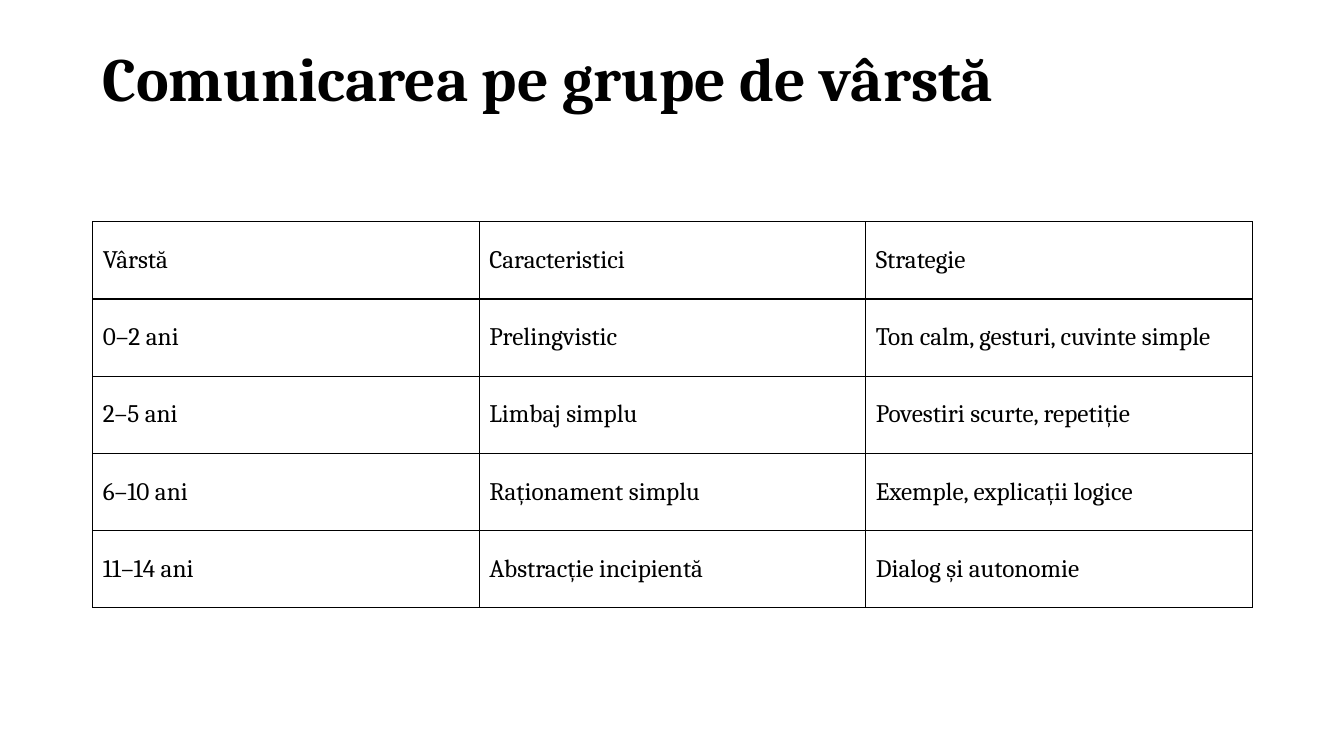
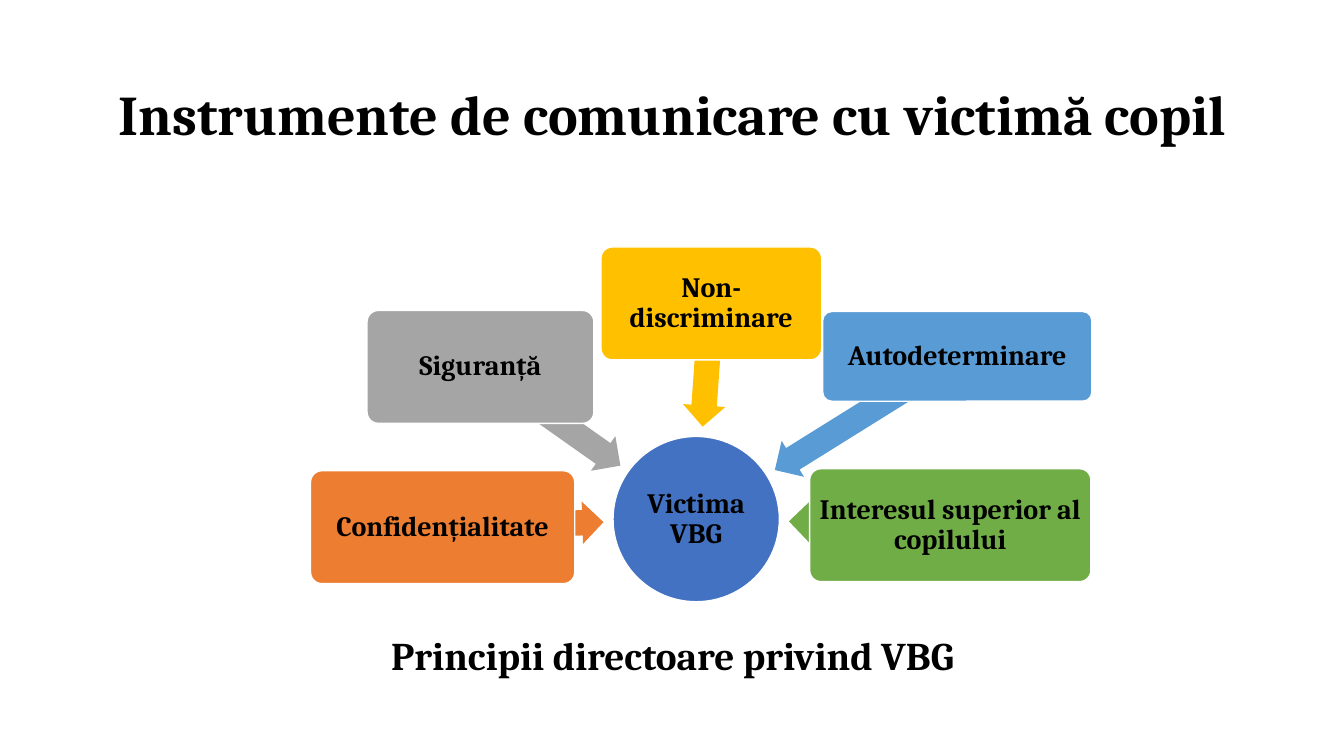
import math

import pptx
import pptx.util
from lxml import etree
from pptx.dml.color import RGBColor
from pptx.enum.shapes import MSO_SHAPE
from pptx.enum.text import MSO_ANCHOR, PP_ALIGN
from pptx.oxml.ns import qn

Inches, Pt = pptx.util.Inches, pptx.util.Pt

# Content
AGE_TITLE = "Comunicarea pe grupe de vârstă"
AGE_ROWS = [
    ("Vârstă", "Caracteristici", "Strategie"),
    ("0–2 ani", "Prelingvistic", "Ton calm, gesturi, cuvinte simple"),
    ("2–5 ani", "Limbaj simplu", "Povestiri scurte, repetiție"),
    ("6–10 ani", "Raționament simplu", "Exemple, explicații logice"),
    ("11–14 ani", "Abstracție incipientă", "Dialog și autonomie"),
]

TOOLS_TITLE = "Instrumente de comunicare cu victimă copil"
TOOLS_CAPTION = "Principii directoare privind VBG"
VICTIM = ("Victima VBG", (6.08, 4.33, 1.65, 1.64))
# Principle, colour, (left, top, width, height)
PRINCIPLES = [
    ("Confidențialitate", "orange", (3.08, 4.67, 2.62, 1.12)),
    ("Siguranță", "gray", (3.64, 3.08, 2.25, 1.12)),
    ("Non-discriminare", "gold", (5.96, 2.45, 2.19, 1.12)),
    ("Autodeterminare", "sky", (8.16, 3.09, 2.67, 0.89)),
    ("Interesul superior al copilului", "green", (8.03, 4.65, 2.79, 1.12)),
]

# Shared style
COLORS = {
    "text": "000000", "white": "FFFFFF", "blue": "4372C3", "orange": "ED7D31",
    "gray": "A5A5A5", "gold": "FFC000", "sky": "599BD5", "green": "70AD47",
}
FONT = "Cambria"
MARGIN, CONTENT_WIDTH = 0.92, 11.5
TITLE_AREA = (MARGIN, 0.4, CONTENT_WIDTH, 1.45)
ARROW_HEIGHT = 0.42
ARROW_REACH = 0.92  # distance from the victim's centre to each arrow tip


def rgb(name):
    return RGBColor.from_string(COLORS[name])


def write(frame, text, size, bold=True, align=PP_ALIGN.CENTER, spacing=0.9):
    frame.text = text
    frame.word_wrap = True
    paragraph = frame.paragraphs[0]
    paragraph.alignment = align
    paragraph.line_spacing = spacing
    font = paragraph.runs[0].font
    font.name, font.size, font.bold = FONT, Pt(size), bold
    font.color.rgb = rgb("text")


def add_text(slide, area, text, size, anchor, **style):
    frame = slide.shapes.add_textbox(*map(Inches, area)).text_frame
    write(frame, text, size, **style)
    frame.vertical_anchor = anchor
    return frame


def add_figure(slide, kind, area, color, outlined=True):
    figure = slide.shapes.add_shape(kind, *map(Inches, area))
    figure.shadow.inherit = False
    figure.fill.solid()
    figure.fill.fore_color.rgb = rgb(color)
    if outlined:
        figure.line.color.rgb = rgb("white")
        figure.line.width = Pt(1)
    else:
        figure.line.fill.background()
    return figure


def label(figure, text, inset):
    frame = figure.text_frame
    frame.margin_left = frame.margin_right = Inches(inset)
    frame.margin_top = frame.margin_bottom = Inches(inset)
    frame.vertical_anchor = MSO_ANCHOR.MIDDLE
    write(frame, text, 20)


def center(area):
    left, top, width, height = area
    return left + width / 2, top + height / 2


def add_borders(cell):
    properties = cell._tc.get_or_add_tcPr()
    for index, side in enumerate(("a:lnL", "a:lnR", "a:lnT", "a:lnB")):
        border = etree.Element(qn(side), w=str(Pt(1)))
        fill = etree.SubElement(border, qn("a:solidFill"))
        etree.SubElement(fill, qn("a:srgbClr"), val=COLORS["text"])
        properties.insert(index, border)


def add_arrow(slide, area, color):
    """Arrow from the middle of a principle towards the victim."""
    hub_x, hub_y = center(VICTIM[1])
    x, y = center(area)
    dx, dy = x - hub_x, y - hub_y
    distance = math.hypot(dx, dy)
    length = distance - ARROW_REACH
    middle = (distance + ARROW_REACH) / 2 / distance
    place = (hub_x + dx * middle - length / 2,
             hub_y + dy * middle - ARROW_HEIGHT / 2, length, ARROW_HEIGHT)
    arrow = add_figure(slide, MSO_SHAPE.LEFT_ARROW, place, color, outlined=False)
    arrow.adjustments[0], arrow.adjustments[1] = 0.6, 0.5
    arrow.rotation = math.degrees(math.atan2(dy, dx)) % 360


def build_age_slide(slide):
    title = add_text(slide, TITLE_AREA, AGE_TITLE, 44, MSO_ANCHOR.TOP,
                     align=PP_ALIGN.LEFT)
    title.margin_top = Inches(0.08)

    # Age table
    columns = len(AGE_ROWS[0])
    table = slide.shapes.add_table(
        len(AGE_ROWS), columns, Inches(MARGIN), Inches(2.2),
        Inches(CONTENT_WIDTH), Inches(3.83)).table
    table.first_row = table.horz_banding = False
    for column in table.columns:
        column.width = Inches(CONTENT_WIDTH / columns)
    for r, values in enumerate(AGE_ROWS):
        for c, value in enumerate(values):
            cell = table.cell(r, c)
            write(cell.text_frame, value, 18, bold=False,
                  align=PP_ALIGN.LEFT, spacing=1.0)
            cell.vertical_anchor = MSO_ANCHOR.MIDDLE
            cell.fill.background()
            add_borders(cell)


def build_tools_slide(slide):
    add_text(slide, TITLE_AREA, TOOLS_TITLE, 40, MSO_ANCHOR.MIDDLE, spacing=1.0)
    add_text(slide, (MARGIN, 6.27, CONTENT_WIDTH, 0.83), TOOLS_CAPTION, 28,
             MSO_ANCHOR.TOP)

    # Victim in the middle, principles around it
    text, area = VICTIM
    label(add_figure(slide, MSO_SHAPE.OVAL, area, "blue"), text, 0.01)
    for text, color, area in PRINCIPLES:
        add_arrow(slide, area, color)
        principle = add_figure(slide, MSO_SHAPE.ROUNDED_RECTANGLE, area, color)
        principle.adjustments[0] = 0.1
        label(principle, text, 0.04)


def main():
    deck = pptx.Presentation()
    deck.slide_width, deck.slide_height = Inches(13.33), Inches(7.5)
    for build in (build_age_slide, build_tools_slide):
        build(deck.slides.add_slide(deck.slide_layouts[6]))
    deck.save("out.pptx")


if __name__ == "__main__":
    main()
